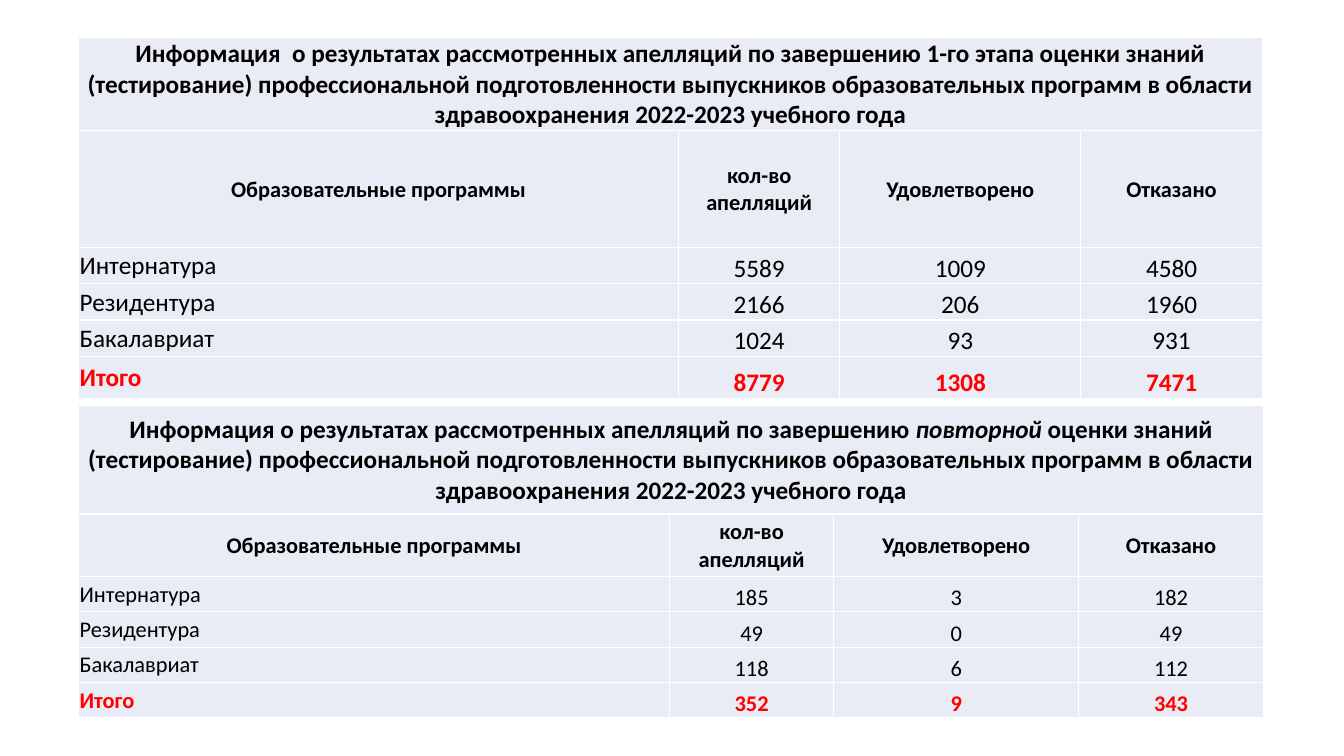
from dataclasses import dataclass

from lxml import etree
from pptx import Presentation
from pptx.dml.color import RGBColor
from pptx.enum.text import MSO_ANCHOR, PP_ALIGN
from pptx.oxml.ns import qn
from pptx.util import Pt

PX = 9144
CENTER, LEFT = PP_ALIGN.CENTER, PP_ALIGN.LEFT
MIDDLE, BOTTOM = MSO_ANCHOR.MIDDLE, MSO_ANCHOR.BOTTOM
BLACK, RED, WHITE, PALE = "000000", "FF0000", "FFFFFF", "E9EBF5"
HEADERS = ["Образовательные программы", "кол-во апелляций", "Удовлетворено", "Отказано"]
PROGRAMS = ["Интернатура", "Резидентура", "Бакалавриат", "Итого"]
TITLE_END = (
    " оценки знаний (тестирование) профессиональной подготовленности выпускников "
    "образовательных программ в области здравоохранения 2022-2023 учебного года"
)
MARGINS = {"margin_left": PX, "margin_right": PX, "margin_top": PX, "margin_bottom": 0}


@dataclass
class Run:
    text: str
    italic: bool = False


@dataclass
class AppealTable:
    top: int
    cols: list[int]
    rows: list[int]
    title: list[Run]
    values: list[list[int]]
    body_size: int


TABLES = [
    AppealTable(
        37, [595, 160, 239, 180], [91, 116, 36, 36, 36, 42],
        [Run("Информация  о результатах рассмотренных апелляций по завершению 1-го этапа" + TITLE_END)],
        [[5589, 1009, 4580], [2166, 206, 1960], [1024, 93, 931], [8779, 1308, 7471]],
        18,
    ),
    AppealTable(
        402, [586, 163, 243, 183], [108, 62, 35, 35, 35, 35],
        [
            Run("Информация о результатах рассмотренных апелляций по завершению "),
            Run("повторной", italic=True),
            Run(TITLE_END),
        ],
        [[185, 3, 182], [49, 0, 49], [118, 6, 112], [352, 9, 343]],
        16,
    ),
]


def rgb(color: str) -> RGBColor:
    return RGBColor.from_string(color)


def style_cell(cell) -> None:
    for name, value in MARGINS.items():
        setattr(cell, name, value)
    tcPr = cell._tc.get_or_add_tcPr()
    for side in ("a:lnL", "a:lnR", "a:lnT", "a:lnB"):
        ln = etree.SubElement(tcPr, qn(side), w=str(Pt(1)))
        fill = etree.SubElement(ln, qn("a:solidFill"))
        etree.SubElement(fill, qn("a:srgbClr"), val=WHITE)
    cell.fill.solid()
    cell.fill.fore_color.rgb = rgb(PALE)


def write_cell(cell, runs: list[Run], size: int, bold: bool = True, color: str = BLACK,
               align=CENTER, anchor=MIDDLE) -> None:
    cell.vertical_anchor = anchor
    p = cell.text_frame.paragraphs[0]
    p.alignment = align
    for run in runs:
        r = p.add_run()
        r.text = run.text
        font = {"name": "Calibri", "size": Pt(size), "bold": bold, "italic": run.italic}
        for name, value in font.items():
            setattr(r.font, name, value)
        r.font.color.rgb = rgb(color)


def draw_table(s, spec: AppealTable) -> None:
    frame = s.shapes.add_table(
        len(spec.rows), len(spec.cols), 78 * PX, spec.top * PX,
        sum(spec.cols) * PX, sum(spec.rows) * PX,
    )
    table = frame.table
    table.first_row = table.horz_banding = False
    for col, width in zip(table.columns, spec.cols):
        col.width = width * PX
    for row, height in zip(table.rows, spec.rows):
        row.height = height * PX
    for cell in table.iter_cells():
        style_cell(cell)

    table.cell(0, 0).merge(table.cell(0, len(spec.cols) - 1))
    write_cell(table.cell(0, 0), spec.title, 18)
    for j, header in enumerate(HEADERS):
        write_cell(table.cell(1, j), [Run(header)], 16)
    for i, (program, values) in enumerate(zip(PROGRAMS, spec.values), start=2):
        total = program == PROGRAMS[-1]
        color = RED if total else BLACK
        write_cell(table.cell(i, 0), [Run(program)], spec.body_size, total, color, LEFT)
        for j, value in enumerate(values, start=1):
            write_cell(table.cell(i, j), [Run(str(value))], spec.body_size, total, color,
                       anchor=BOTTOM)


def main() -> None:
    prs = Presentation()
    prs.slide_width, prs.slide_height = 1333 * PX, 750 * PX
    s = prs.slides.add_slide(prs.slide_layouts[6])
    for table in TABLES:
        draw_table(s, table)
    prs.save("out.pptx")


if __name__ == "__main__":
    main()
